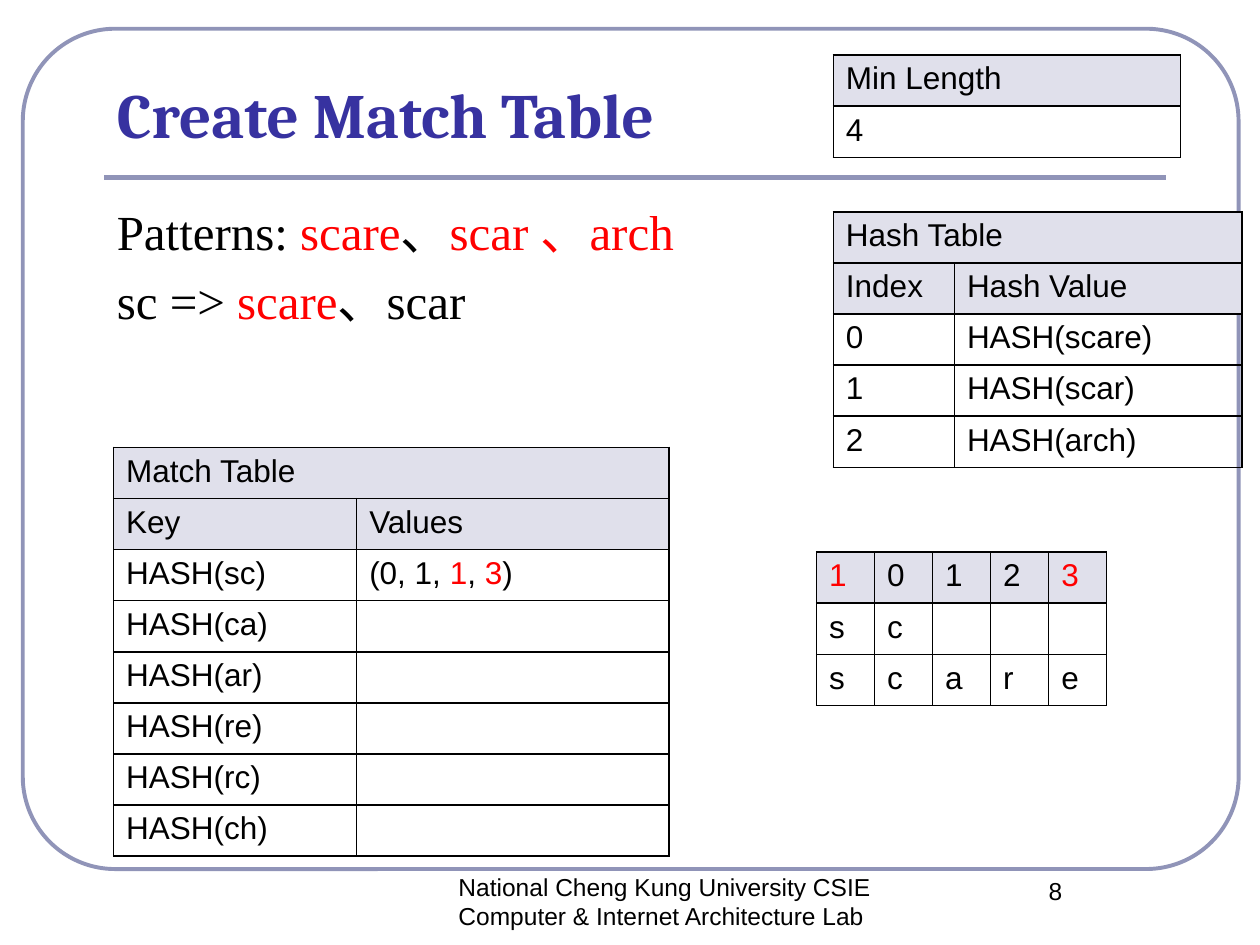
from lxml.etree import SubElement
from pptx import Presentation
from pptx.dml.color import RGBColor
from pptx.enum.shapes import MSO_CONNECTOR as Connector, MSO_SHAPE as Shape
from pptx.enum.text import MSO_ANCHOR as Anchor, MSO_AUTO_SIZE as AutoSize, PP_ALIGN as Align
from pptx.oxml import parse_xml
from pptx.oxml.ns import nsdecls, qn
from pptx.util import Cm, Pt

# Content: text between asterisks is highlighted
TITLE = "Create Match Table"
PATTERNS = ["Patterns: *scare*、*scar 、arch*", "sc => *scare*、scar"]
FOOTER = "National Cheng Kung University CSIE Computer & Internet Architecture Lab "
PAGE_NUMBER = "8"

# Tables: position and column widths in cm; a short row spans the table
TABLES = [
    {"at": (2.29, 9.02), "widths": [4.9, 6.3], "headers": 2,
     "rows": [["Match Table"], ["Key", "Values"], ["HASH(sc)", "(0, 1, *1*, *3*)"],
              ["HASH(ca)", ""], ["HASH(ar)", ""], ["HASH(re)", ""],
              ["HASH(rc)", ""], ["HASH(ch)", ""]]},
    {"at": (16.8, 1.11), "widths": [7], "headers": 1,
     "rows": [["Min Length"], ["4"]]},
    {"at": (16.8, 4.27), "widths": [2.44, 5.8], "headers": 2,
     "rows": [["Hash Table"], ["Index", "Hash Value"], ["0", "HASH(scare)"],
              ["1", "HASH(scar)"], ["2", "HASH(arch)"]]},
    {"at": (16.46, 11.13), "widths": [1.17] * 5, "headers": 1,
     "rows": [["*1*", "0", "1", "2", "*3*"], ["s", "c", "", "", ""], list("scare")]},
]
ROW_HEIGHT = 1.03

COLORS = {"text": "000000", "highlight": "FF0000", "title": "3732A0",
          "frame": "9094B8", "header": "E0E0EB", "border": "000000"}


def color(name):
    return RGBColor.from_string(COLORS[name])


def place(part, left, top, width, height):
    part.left, part.top, part.width, part.height = map(Cm, (left, top, width, height))


def write(frame, lines, size=18, font="Arial", ink="text", bold=False,
          align=Align.LEFT, before=0):
    for number, line in enumerate(lines):
        paragraph = frame.add_paragraph() if number else frame.paragraphs[0]
        paragraph.alignment = align
        paragraph.space_before = Pt(before)
        for position, piece in enumerate(line.split("*")):
            if piece:
                run = paragraph.add_run()
                run.text = piece
                run.font.size, run.font.name, run.font.bold = Pt(size), font, bold
                run.font.color.rgb = color("highlight" if position % 2 else ink)


def outline(cell):
    properties = cell._tc.get_or_add_tcPr()
    for index, side in enumerate(("lnL", "lnR", "lnT", "lnB")):
        properties.insert(index, parse_xml(
            f'<a:{side} {nsdecls("a")} w="12700"><a:solidFill>'
            f'<a:srgbClr val="{COLORS["border"]}"/></a:solidFill></a:{side}>'))


def draw_table(slide, at, widths, headers, rows):
    table = slide.shapes.add_table(
        len(rows), len(widths), Cm(at[0]), Cm(at[1]),
        Cm(sum(widths)), Cm(ROW_HEIGHT * len(rows))).table
    table.first_row = table.horz_banding = False
    for column, width in zip(table.columns, widths):
        column.width = Cm(width)
    for r, texts in enumerate(rows):
        table.rows[r].height = Cm(ROW_HEIGHT)
        for c in range(len(widths)):
            cell = table.cell(r, c)
            if r < headers:
                cell.fill.solid()
                cell.fill.fore_color.rgb = color("header")
            else:
                cell.fill.background()
            outline(cell)
            if c < len(texts):
                write(cell.text_frame, [texts[c]])
        if len(texts) < len(widths):
            table.cell(r, 0).merge(table.cell(r, len(widths) - 1))


def main():
    deck = Presentation()
    deck.slide_width, deck.slide_height = Cm(25.4), Cm(19.05)
    slide = deck.slides.add_slide(deck.slide_layouts[1])
    title, body = slide.placeholders

    # Rounded frame and title rule
    frame = slide.shapes.add_shape(Shape.ROUNDED_RECTANGLE, 0, 0, 0, 0)
    place(frame, 0.46, 0.58, 24.51, 16.94)
    frame.adjustments[0] = 0.11
    frame.shadow.inherit = False
    frame.fill.background()
    rule = slide.shapes.add_connector(Connector.STRAIGHT, Cm(2.1), Cm(3.58), Cm(23.5), Cm(3.58))
    SubElement(rule._element.spPr, qn("a:effectLst"))
    for part, weight in ((frame, 2.25), (rule, 3)):
        part.line.color.rgb = color("frame")
        part.line.width = Pt(weight)
    # Decoration lies behind the placeholders
    for index, part in enumerate((frame, rule)):
        slide.shapes._spTree.insert(2 + index, part._element)

    # Title and patterns
    place(title, 2.1, 1.52, 21.4, 1.65)
    title.text_frame.vertical_anchor = Anchor.BOTTOM
    write(title.text_frame, [TITLE], size=36, font="Cambria", ink="title", bold=True)
    place(body, 2.1, 3.94, 21.4, 12.57)
    write(body.text_frame, PATTERNS, size=28, font="Times New Roman", before=5.6)
    for paragraph in body.text_frame.paragraphs:
        properties = paragraph._p.get_or_add_pPr()
        properties.set("marL", "0")
        properties.set("indent", "0")
        SubElement(properties, qn("a:buNone"))
    for part in (title, body):
        part.text_frame.auto_size = AutoSize.NONE

    # Footer and page number
    for text, box in ((FOOTER, (7.9, 17.45, 11, 1.27)), (PAGE_NUMBER, (19.05, 17.53, 4.45, 1.27))):
        note = slide.shapes.add_textbox(*map(Cm, box)).text_frame
        note.word_wrap = True
        write(note, [text], size=14, align=Align.CENTER)

    for table in TABLES:
        draw_table(slide, **table)

    deck.save("out.pptx")


if __name__ == "__main__":
    main()
